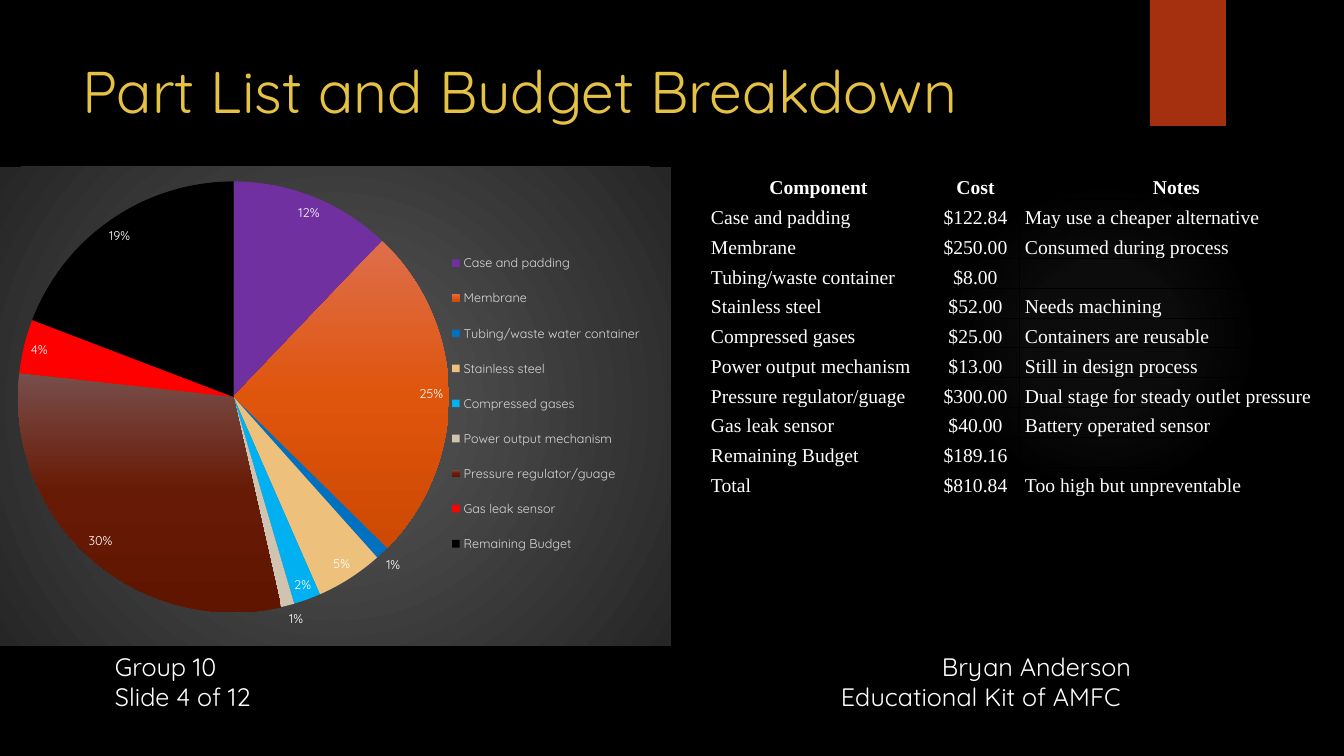
from dataclasses import dataclass

from lxml import etree
from pptx import Presentation
from pptx.chart.data import CategoryChartData
from pptx.dml.color import RGBColor
from pptx.enum.chart import XL_CHART_TYPE, XL_LABEL_POSITION, XL_LEGEND_POSITION
from pptx.enum.shapes import MSO_SHAPE
from pptx.enum.text import MSO_ANCHOR, MSO_AUTO_SIZE, PP_ALIGN
from pptx.oxml import parse_xml
from pptx.oxml.ns import nsdecls, qn
from pptx.util import Pt

PIE = XL_CHART_TYPE.PIE
BEST_FIT = XL_LABEL_POSITION.BEST_FIT
LEGEND_RIGHT = XL_LEGEND_POSITION.RIGHT
RECT, OVAL = MSO_SHAPE.RECTANGLE, MSO_SHAPE.OVAL
TOP, BOTTOM = MSO_ANCHOR.TOP, MSO_ANCHOR.BOTTOM
NO_FIT = MSO_AUTO_SIZE.NONE
LEFT, CENTER = PP_ALIGN.LEFT, PP_ALIGN.CENTER


@dataclass(frozen=True)
class Theme:
    sans: str = "Quicksand"
    serif: str = "Times New Roman"
    background: str = "000000"
    text: str = "FFFFFF"
    title: str = "E5C243"
    legend: str = "D9D9D9"
    accent: str = "A5300F"
    border: str = "000000"
    glow: tuple = ((0, "ADADAD", 7), (36, "ADADAD", 6), (69, "ADADAD", 0))
    panel: tuple = ((0, "595959", 100), (100, "262626", 100))
    title_size: int = 42
    footer_size: int = 18
    table_size: int = 14
    chart_size: int = 10
    label_size: int = 9


THEME = Theme()

ORANGE = ((0, "DE6E4C", 100), (50, "DF550C", 100), (100, "CE4903", 100))
MAROON = ((0, "784E4B", 100), (50, "671A05", 100), (100, "601500", 100))
SHARES = [
    ("Case and padding", 12, "7030A0"),
    ("Membrane", 25, ORANGE),
    ("Tubing/waste water container", 1, "0070C0"),
    ("Stainless steel", 5, "EDC17C"),
    ("Compressed gases", 2, "00B0F0"),
    ("Power output mechanism", 1, "D0C4B1"),
    ("Pressure regulator/guage", 30, MAROON),
    ("Gas leak sensor", 4, "FF0000"),
    ("Remaining Budget", 19, "000000"),
]
PARTS = [
    ("Component", "Cost", "Notes"),
    ("Case and padding", "$122.84", "May use a cheaper alternative"),
    ("Membrane", "$250.00", "Consumed during process"),
    ("Tubing/waste container", "$8.00", ""),
    ("Stainless steel", "$52.00", "Needs machining"),
    ("Compressed gases", "$25.00", "Containers are reusable"),
    ("Power output mechanism", "$13.00", "Still in design process"),
    ("Pressure regulator/guage", "$300.00", "Dual stage for steady outlet pressure"),
    ("Gas leak sensor", "$40.00", "Battery operated sensor"),
    ("Remaining Budget", "$189.16", ""),
    ("Total", "$810.84", "Too high but unpreventable"),
]
# Left text, right text, offset of the right text
FOOTER = [
    ("Group 10", "Bryan Anderson", 827),
    ("Slide 4 of 12", "Educational Kit of AMFC", 726),
]


def px(n):
    return round(n * 914400 / 100.8)


def box_px(*box):
    return [px(n) for n in box]


def rgb(color):
    return RGBColor.from_string(color)


def set_font(font, name, size, color, bold=False):
    font.name, font.size, font.bold = name, Pt(size), bold
    font.color.rgb = rgb(color)


def set_gradient(sp_pr, stops, radial=False):
    """Replace the solid fill of sp_pr by a gradient of (position, colour, opacity)."""
    gs = "".join(
        f'<a:gs pos="{pos * 1000}"><a:srgbClr val="{color}">'
        f'<a:alpha val="{alpha * 1000}"/></a:srgbClr></a:gs>'
        for pos, color, alpha in stops)
    course = ('<a:path path="circle"><a:fillToRect l="50000" t="50000" r="50000" b="50000"/>'
              '</a:path>' if radial else '<a:lin ang="5400000" scaled="0"/>')
    grad = parse_xml(f'<a:gradFill {nsdecls("a")} rotWithShape="1">'
                     f'<a:gsLst>{gs}</a:gsLst>{course}</a:gradFill>')
    sp_pr.replace(sp_pr.find(qn("a:solidFill")), grad)


def set_layout(parent, index, box, frame, inner=False):
    """Place a chart part at box, in px, within the chart frame."""
    for old in parent.findall(qn("c:layout")):
        parent.remove(old)
    x, y, w, h = box
    values = {"xMode": "edge", "yMode": "edge", "x": x / frame[2], "y": y / frame[3],
              "w": w / frame[2], "h": h / frame[3]}
    if inner:
        values = {"layoutTarget": "inner", **values}
    layout = etree.Element(qn("c:layout"))
    manual = etree.SubElement(layout, qn("c:manualLayout"))
    for tag, value in values.items():
        etree.SubElement(manual, qn(f"c:{tag}")).set("val", str(value))
    parent.insert(index, layout)


def add_decor(slide, kind, box, color):
    sp = slide.shapes.add_shape(kind, *box_px(*box))
    sp.shadow.inherit = False
    sp.fill.solid()
    sp.fill.fore_color.rgb = rgb(color)
    sp.line.fill.background()
    return sp


def add_title(slide, box, text):
    sp = slide.shapes.title
    sp.left, sp.top, sp.width, sp.height = box_px(*box)
    tf = sp.text_frame
    tf.text, tf.vertical_anchor, tf.auto_size = text, TOP, NO_FIT
    p = tf.paragraphs[0]
    p.alignment = LEFT
    set_font(p.font, THEME.sans, THEME.title_size, THEME.title)


def add_footer(slide, box):
    tf = slide.shapes.add_textbox(*box_px(*box)).text_frame
    tf.word_wrap = True
    for i, (left, right, offset) in enumerate(FOOTER):
        p = tf.add_paragraph() if i else tf.paragraphs[0]
        p.text = f"{left}\t{right}"
        p.alignment = LEFT
        tabs = etree.SubElement(p._p.get_or_add_pPr(), qn("a:tabLst"))
        etree.SubElement(tabs, qn("a:tab"), pos=str(px(offset)), algn="l")
        set_font(p.font, THEME.sans, THEME.footer_size, THEME.text)


def add_parts_table(slide, box, widths, header_height):
    rows, cols = len(PARTS), len(widths)
    table = slide.shapes.add_table(rows, cols, *box_px(*box)).table
    table.horz_banding = False
    for column, width in zip(table.columns, widths):
        column.width = px(width)
    for r, texts in enumerate(PARTS):
        body_height = (box[3] - header_height) / (rows - 1)
        table.rows[r].height = px(body_height if r else header_height)
        for c, text in enumerate(texts):
            cell = table.cell(r, c)
            centered = r == 0 or c == 1
            cell.text, cell.vertical_anchor = text, BOTTOM
            cell.margin_left = px(1 if centered else 6)
            cell.margin_right = cell.margin_top = px(1)
            cell.margin_bottom = 0
            p = cell.text_frame.paragraphs[0]
            p.alignment = CENTER if centered else LEFT
            set_font(p.font, THEME.serif, THEME.table_size, THEME.text, bold=r == 0)
            # Heavier lines around the table and under its header
            heavy = {"L": c == 0, "R": c == cols - 1, "T": r < 2, "B": r in (0, rows - 1)}
            for side, is_heavy in heavy.items():
                cell._tc.get_or_add_tcPr().append(parse_xml(
                    f'<a:ln{side} {nsdecls("a")} w="{Pt(1 if is_heavy else 0.5)}"><a:solidFill>'
                    f'<a:srgbClr val="{THEME.border}"/></a:solidFill></a:ln{side}>'))
            cell.fill.background()


def add_budget_chart(slide, box):
    data = CategoryChartData()
    data.categories = [name for name, _, _ in SHARES]
    data.add_series("Series 1", [share for _, share, _ in SHARES])
    chart = slide.shapes.add_chart(PIE, *box_px(*box), data).chart
    chart.has_title = False
    set_font(chart.font, THEME.sans, THEME.chart_size, THEME.text)
    root = chart.element

    # Panel behind the pie
    panel = parse_xml(f'<c:spPr {nsdecls("c", "a")}><a:solidFill/><a:ln><a:noFill/></a:ln></c:spPr>')
    root.find(qn("c:chart")).addnext(panel)
    set_gradient(panel, THEME.panel, radial=True)

    # Slices
    plot = chart.plots[0]
    plot.vary_by_categories = True
    for i, (_, _, color) in enumerate(SHARES):
        fmt = plot.series[0].points[i].format
        fmt.fill.solid()
        fmt.line.fill.background()
        if isinstance(color, str):
            fmt.fill.fore_color.rgb = rgb(color)
        else:
            set_gradient(root.xpath(f'.//c:dPt[c:idx/@val="{i}"]/c:spPr')[0], color)
    set_layout(root.xpath(".//c:plotArea")[0], 0, (18, 14, 431, 432), box, inner=True)

    # Percent labels
    plot.has_data_labels = True
    labels = plot.data_labels
    labels.show_percentage, labels.show_value = True, False
    labels.number_format, labels.number_format_is_linked = "0%", False
    labels.position = BEST_FIT
    set_font(labels.font, THEME.sans, THEME.label_size, THEME.text)

    # Legend
    chart.has_legend = True
    chart.legend.position = LEGEND_RIGHT
    chart.legend.include_in_layout = False
    set_font(chart.legend.font, THEME.sans, THEME.label_size, THEME.legend)
    set_layout(root.xpath(".//c:legend")[0], 1, (436, 69, 220, 335), box)


def main():
    prs = Presentation()
    prs.slide_width, prs.slide_height = box_px(1344, 756)
    slide = prs.slides.add_slide(prs.slide_layouts[5])
    slide.background.fill.solid()
    slide.background.fill.fore_color.rgb = rgb(THEME.background)
    glow = add_decor(slide, OVAL, (949, 184, 310, 310), THEME.background)
    set_gradient(glow.element.spPr, THEME.glow, radial=True)
    add_decor(slide, RECT, (1150, 0, 76, 126), THEME.accent)
    add_title(slide, (72, 50, 1037, 154), "Part List and Budget Breakdown")
    add_footer(slide, (105, 646, 1052, 72))
    add_parts_table(slide, (705, 168, 629, 329), (227, 87, 315), 31)
    add_budget_chart(slide, (0, 167, 671, 479))
    prs.save("out.pptx")


if __name__ == "__main__":
    main()
